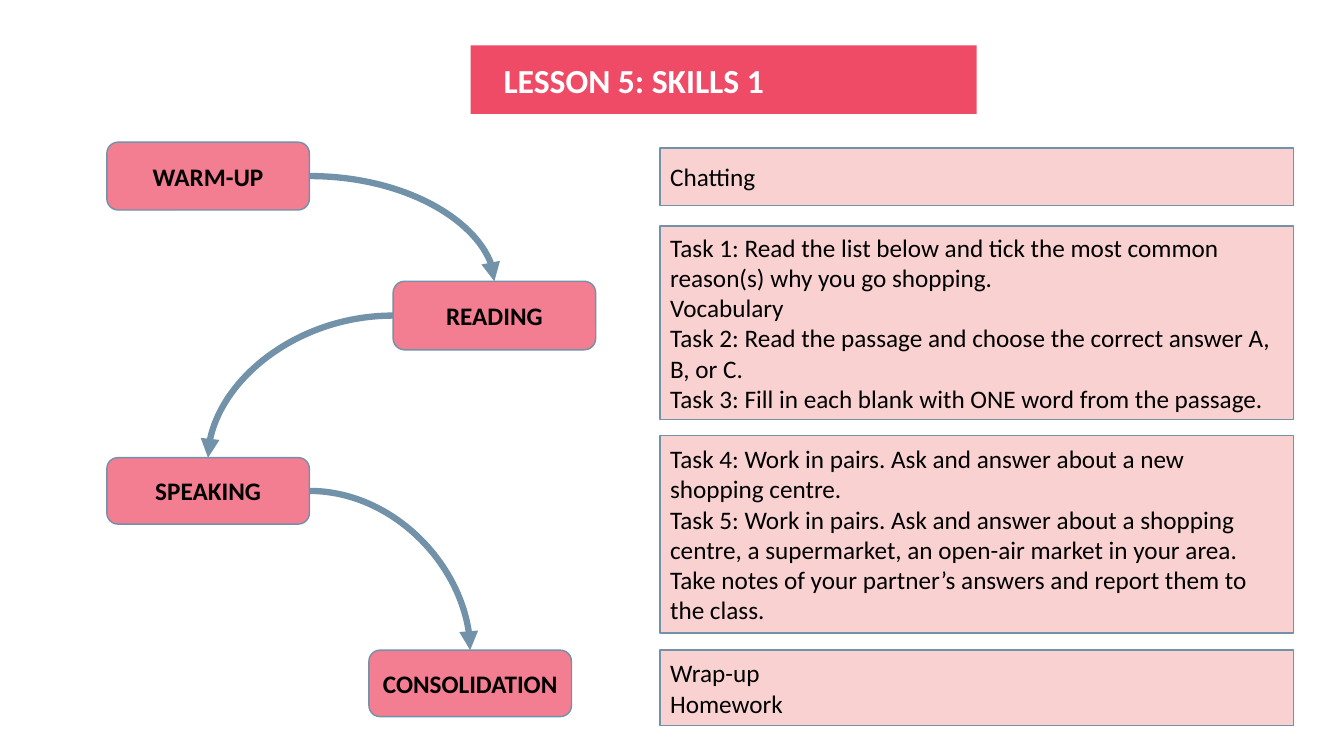
from lxml import etree
from pptx import Presentation
from pptx.dml.color import RGBColor
from pptx.enum.shapes import MSO_CONNECTOR, MSO_SHAPE
from pptx.enum.text import MSO_ANCHOR, MSO_AUTO_SIZE, PP_ALIGN
from pptx.oxml.ns import qn
from pptx.util import Pt

RECTANGLE, ROUNDED = MSO_SHAPE.RECTANGLE, MSO_SHAPE.ROUNDED_RECTANGLE
CURVE = MSO_CONNECTOR.CURVE
MIDDLE, NO_FIT = MSO_ANCHOR.MIDDLE, MSO_AUTO_SIZE.NONE
LEFT, CENTER = PP_ALIGN.LEFT, PP_ALIGN.CENTER
TOP_SIDE, LEFT_SIDE, RIGHT_SIDE = 0, 1, 3

TITLE = "LESSON 5: SKILLS 1"
STEPS = [
    ("WARM-UP", 76.3, 101.5, 48.5),
    ("READING", 280.8, 200.9, 49),
    ("SPEAKING", 76.3, 326.9, 47.5),
    ("CONSOLIDATION", 263.5, 464.4, 47.5),
]
PANELS = [
    (105.8, 41, ["Chatting"]),
    (161.3, 138.2, [
        "Task 1: Read the list below and tick the most common reason(s) why you go shopping.",
        "Vocabulary",
        "Task 2: Read the passage and choose the correct answer A, B, or C.",
        "Task 3: Fill in each blank with ONE word from the passage.",
    ]),
    (311, 141.1, [
        "Task 4: Work in pairs. Ask and answer about a new shopping centre.",
        "Task 5: Work in pairs. Ask and answer about a shopping centre, a supermarket, "
        "an open-air market in your area. Take notes of your partner’s answers and "
        "report them to the class.",
    ]),
    (464.4, 54, ["Wrap-up", "Homework"]),
]
STEP_WIDTH = 144.7
PANEL_LEFT, PANEL_WIDTH = 471.6, 452.4
BANNER = {"left": 336.2, "top": 32.4, "width": 361.4, "height": 49}
BANNER_INDENT = 23.5

THEME = {
    "font": "Calibri",
    "banner": RGBColor.from_string("EF4B66"),
    "step": RGBColor.from_string("F37D91"),
    "panel": RGBColor.from_string("F7A5A5"),
    "line": RGBColor.from_string("7192A9"),
    "light": RGBColor.from_string("FFFFFF"),
    "dark": RGBColor.from_string("000000"),
    "title_size": 24,
    "body_size": 18,
    "outline": 1,
    "arrow": 4.5,
    "panel_alpha": 50000,
}


def write(shape, lines, align, color, size, bold):
    frame = shape.text_frame
    for name, value in {"word_wrap": True, "auto_size": NO_FIT, "vertical_anchor": MIDDLE}.items():
        setattr(frame, name, value)
    style = {"name": THEME["font"], "size": Pt(size), "bold": bold}
    for index, line in enumerate(lines):
        para = frame.add_paragraph() if index else frame.paragraphs[0]
        para.alignment = align
        span = para.add_run()
        span.text = line
        for name, value in style.items():
            setattr(span.font, name, value)
        span.font.color.rgb = color


def add_box(page, kind, left, top, width, height, fill):
    box = page.shapes.add_shape(kind, Pt(left), Pt(top), Pt(width), Pt(height))
    box.shadow.inherit = False
    box.fill.solid()
    box.fill.fore_color.rgb = fill
    box.line.color.rgb = THEME["line"]
    box.line.width = Pt(THEME["outline"])
    return box


def add_title(page):
    title = page.shapes.title
    for name, value in BANNER.items():
        setattr(title, name, Pt(value))
    geometry = etree.SubElement(title.element.spPr, qn("a:prstGeom"), prst="roundRect")
    guides = etree.SubElement(geometry, qn("a:avLst"))
    etree.SubElement(guides, qn("a:gd"), name="adj", fmla="val 42700")
    title.fill.solid()
    title.fill.fore_color.rgb = THEME["banner"]
    title.text_frame.margin_left = Pt(BANNER_INDENT)
    write(title, [TITLE], LEFT, THEME["light"], THEME["title_size"], True)


def add_step(page, label, left, top, height):
    box = add_box(page, ROUNDED, left, top, STEP_WIDTH, height, THEME["step"])
    box.text_frame.margin_left = box.text_frame.margin_right = Pt(3.6)
    write(box, [label], CENTER, THEME["dark"], THEME["body_size"], True)
    return box


def add_panel(page, top, height, lines):
    box = add_box(page, RECTANGLE, PANEL_LEFT, top, PANEL_WIDTH, height, THEME["panel"])
    color = box.element.spPr.find(qn("a:solidFill"))[0]
    etree.SubElement(color, qn("a:alpha"), val=str(THEME["panel_alpha"]))
    write(box, lines, LEFT, THEME["dark"], THEME["body_size"], False)


def add_arrow(page, source, target):
    rightward = target.left > source.left
    start_x = source.left + source.width if rightward else source.left
    arrow = page.shapes.add_connector(
        CURVE, start_x, source.top + source.height // 2,
        target.left + target.width // 2, target.top)
    arrow.begin_connect(source, RIGHT_SIDE if rightward else LEFT_SIDE)
    arrow.end_connect(target, TOP_SIDE)
    arrow.line.color.rgb = THEME["line"]
    arrow.line.width = Pt(THEME["arrow"])
    properties = arrow.element.spPr
    properties.find(qn("a:prstGeom")).set("prst", "curvedConnector2")
    etree.SubElement(properties.find(qn("a:ln")), qn("a:tailEnd"), type="triangle")
    etree.SubElement(properties, qn("a:effectLst"))


def main():
    deck = Presentation()
    deck.slide_width, deck.slide_height = Pt(960), Pt(540)
    page = deck.slides.add_slide(deck.slide_layouts.get_by_name("Title Only"))
    add_title(page)
    for panel in PANELS:
        add_panel(page, *panel)
    boxes = [add_step(page, *step) for step in STEPS]
    for source, target in zip(boxes, boxes[1:]):
        add_arrow(page, source, target)
    deck.save("out.pptx")


if __name__ == "__main__":
    main()
